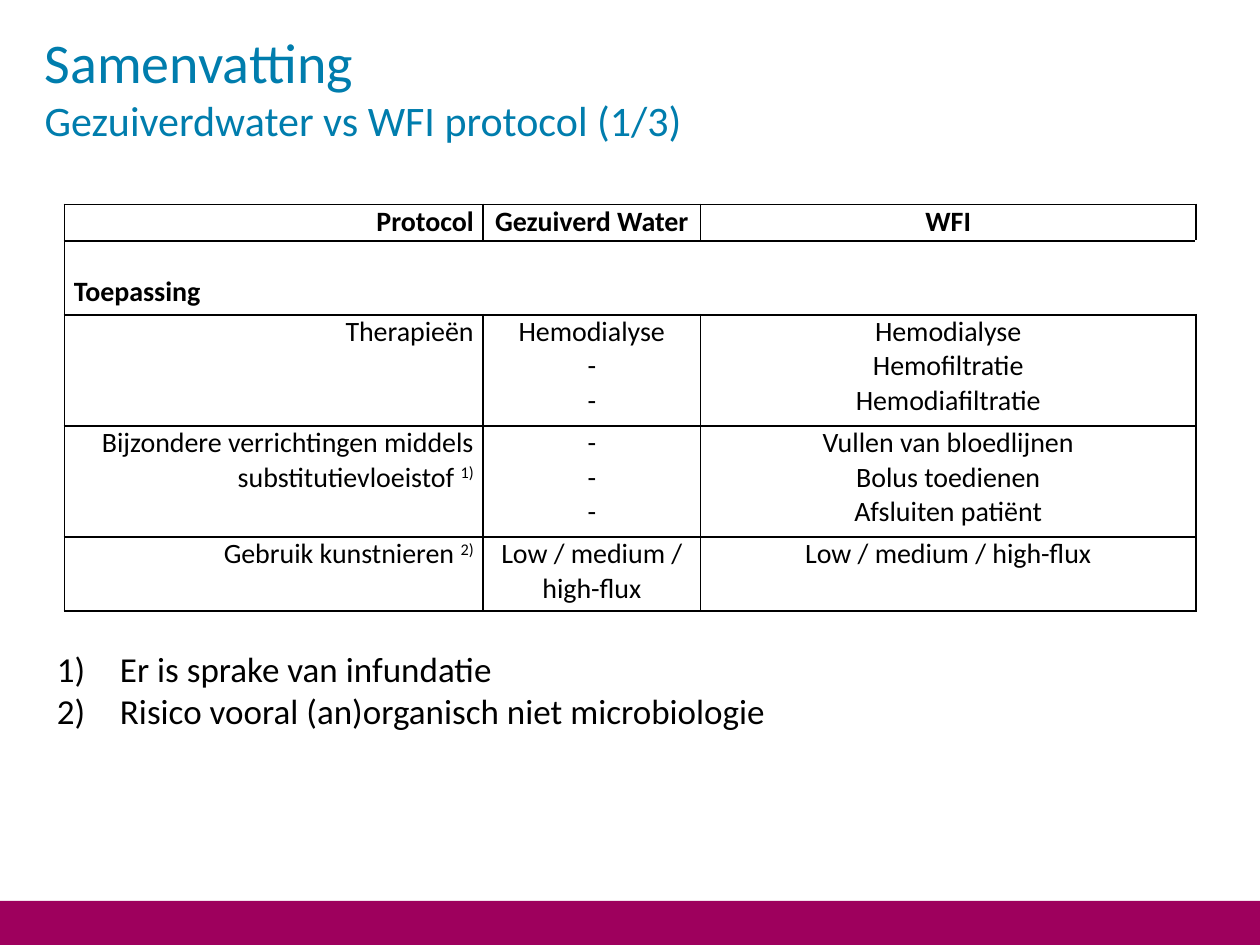
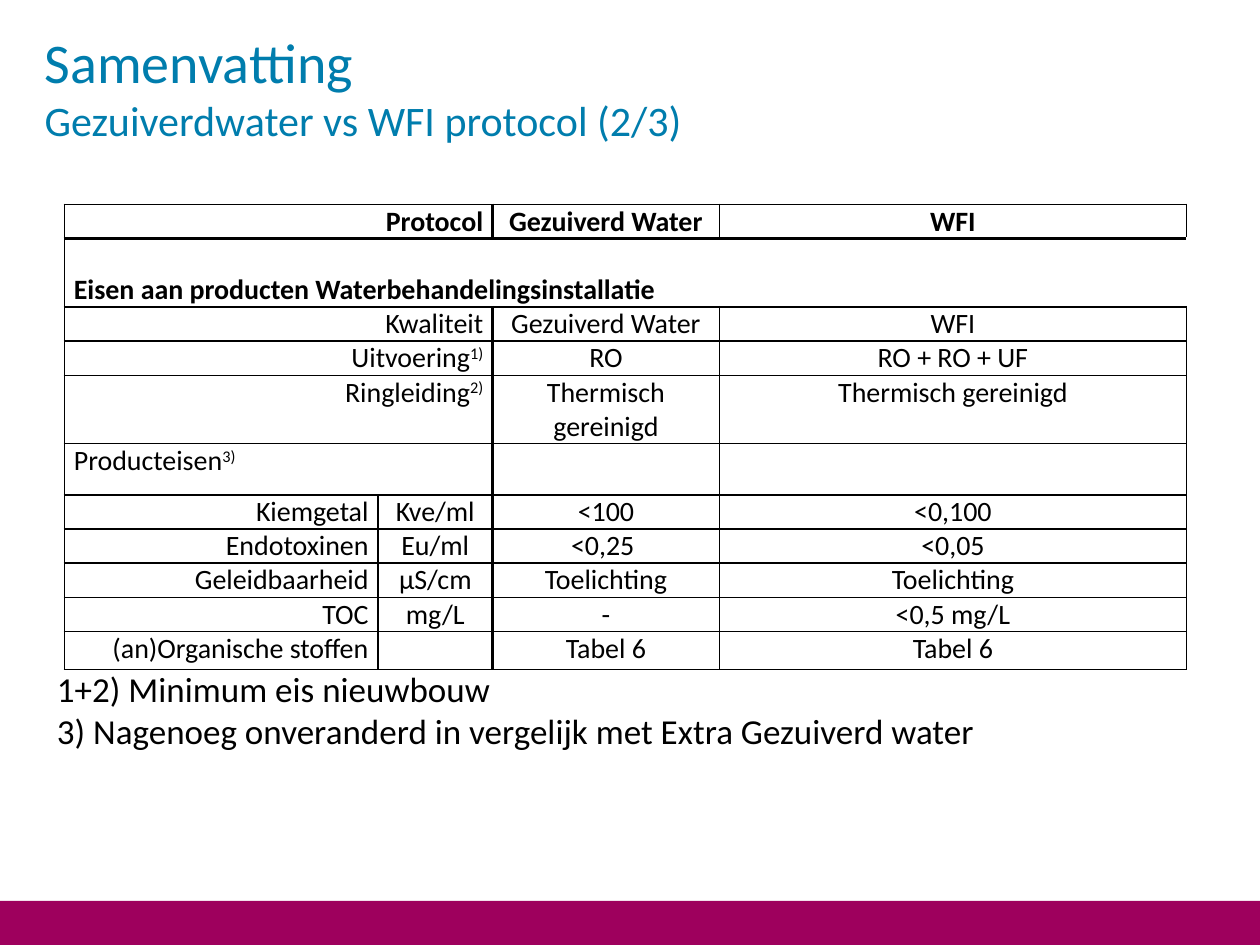
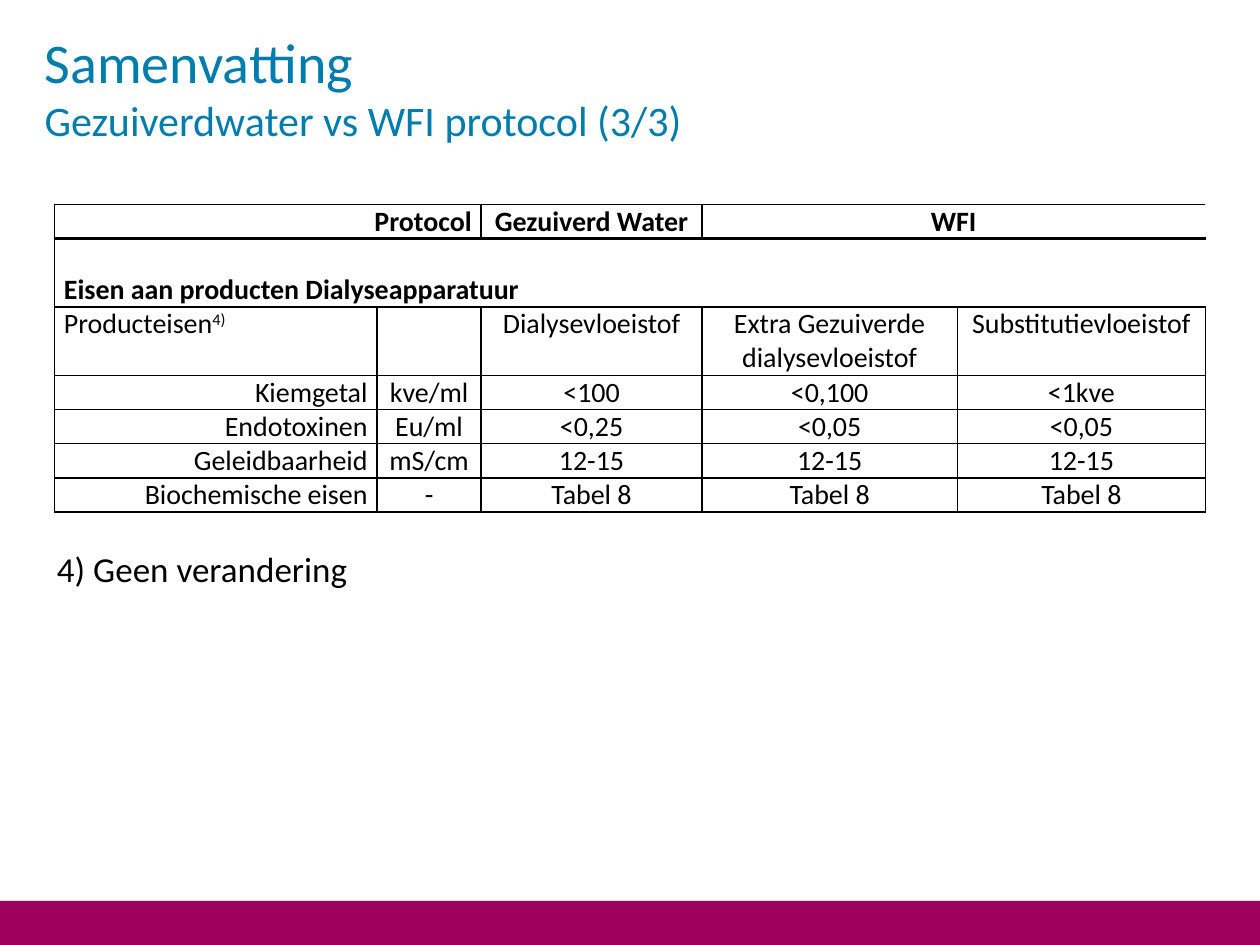
from dataclasses import dataclass

from lxml import etree
from pptx import Presentation
from pptx import util as u
from pptx.dml.color import RGBColor
from pptx.enum import shapes, text
from pptx.oxml import ns

Cm, Pt, Align = u.Cm, u.Pt, text.PP_ALIGN


@dataclass(frozen=True)
class Theme:
    font: str = "Calibri"
    title_color: str = "007DAD"
    band_color: str = "9E005D"
    ink: str = "000000"
    title_size: int = 32
    subtitle_size: int = 24
    remark_size: int = 20
    table_size: int = 16
    thin: float = 1
    heavy: float = 1.5
    line_height: float = 0.69  # one line of table text, in cm


THEME = Theme()


def write(paragraph, content, size, color=THEME.ink, bold=False, align=Align.LEFT):
    """Add formatted text; what follows a ^ is superscript."""
    paragraph.alignment = align
    for index, part in enumerate(content.split("^")):
        run = paragraph.add_run()
        run.text = part
        run.font.name, run.font.size, run.font.bold = THEME.font, Pt(size), bold
        run.font.color.rgb = RGBColor.from_string(color)
        if index:
            run.font._element.set("baseline", "30000")
    if not content:
        paragraph._p.get_or_add_endParaRPr().set("sz", str(size * 100))


def write_lines(frame, content, **style):
    for index, line in enumerate(content.split("\n")):
        paragraph = frame.add_paragraph() if index else frame.paragraphs[0]
        write(paragraph, line, **style)


def set_border(cell, side, width):
    properties = cell._tc.get_or_add_tcPr()
    line = etree.SubElement(properties, ns.qn(f"a:ln{side}"), w=str(Pt(width)))
    fill = etree.SubElement(line, ns.qn("a:solidFill"))
    etree.SubElement(fill, ns.qn("a:srgbClr"), val=THEME.ink)


class Deck:
    def __init__(self, theme):
        self.theme = theme
        self.presentation = Presentation()
        self.presentation.slide_width = Cm(25.4)
        self.presentation.slide_height = Cm(19.05)
        self.slide = None

    def start_slide(self, subtitle):
        self.slide = self.presentation.slides.add_slide(self.presentation.slide_layouts[6])
        self.band()
        self.title("Samenvatting", subtitle)

    def band(self):
        shape = self.slide.shapes.add_shape(
            shapes.MSO_SHAPE.RECTANGLE, 0, Cm(18.16), Cm(25.4), Cm(0.89))
        shape.shadow.inherit = False
        shape.fill.solid()
        shape.fill.fore_color.rgb = RGBColor.from_string(self.theme.band_color)
        shape.line.fill.background()

    def text_box(self, left, top, width, height):
        frame = self.slide.shapes.add_textbox(Cm(left), Cm(top), Cm(width), Cm(height)).text_frame
        frame.word_wrap = True
        return frame

    def title(self, heading, subtitle):
        frame = self.text_box(0.9, 0.56, 16.9, 2.72)
        frame.margin_left = frame.margin_right = frame.margin_top = frame.margin_bottom = 0
        paragraph = frame.paragraphs[0]
        color = self.theme.title_color
        write(paragraph, heading, size=self.theme.title_size, color=color)
        paragraph.add_line_break()
        write(paragraph, subtitle, size=self.theme.subtitle_size, color=color)

    def remarks(self, top, height, content, numbered=False):
        frame = self.text_box(0.9, top, 23.4, height)
        write_lines(frame, content, size=self.theme.remark_size)
        for paragraph in frame.paragraphs:
            properties = paragraph._p.get_or_add_pPr()
            properties.set("marL", str(Cm(1.27)))
            properties.set("indent", str(Cm(-1.27)))
            if numbered:
                etree.SubElement(properties, ns.qn("a:buAutoNum"), type="arabicParenR")

    def table(self, left, widths, heights, rows, label_columns=1, left_rows=(),
              section_line=THEME.heavy):
        """None in a row continues the cell to its left; row 1 is the section heading."""
        theme = self.theme
        table = self.slide.shapes.add_table(
            len(rows), len(widths), Cm(left), Cm(4.12), Cm(sum(widths)), Cm(sum(heights))).table
        table.first_row = table.horz_banding = False
        for column, width in zip(table.columns, widths):
            column.width = Cm(width)
        for row, height in zip(table.rows, heights):
            row.height = Cm(height)

        horizontal = [theme.thin] * (len(rows) + 1)
        horizontal[1:3] = theme.heavy, section_line
        for row_index, row in enumerate(rows):
            section = row_index == 1
            for start, content in enumerate(row):
                if content is None:
                    continue
                end = start
                while end + 1 < len(row) and row[end + 1] is None:
                    end += 1
                # Borders
                for column in range(start, end + 1):
                    cell = table.cell(row_index, column)
                    if column == start:
                        heavy = start == label_columns
                        set_border(cell, "L", theme.heavy if heavy else theme.thin)
                    if column == end:
                        heavy = end + 1 == label_columns
                        set_border(cell, "R", theme.heavy if heavy else theme.thin)
                    set_border(cell, "T", horizontal[row_index])
                    set_border(cell, "B", horizontal[row_index + 1])
                    cell.fill.background()
                # Content
                cell = table.cell(row_index, start)
                if end > start:
                    cell.merge(table.cell(row_index, end))
                cell.margin_left = cell.margin_right = Cm(0.19)
                cell.margin_top = Cm(theme.line_height if section else 0)
                cell.margin_bottom = 0
                align = Align.CENTER
                if start == 0:
                    align = Align.LEFT if section or row_index in left_rows else Align.RIGHT
                write_lines(cell.text_frame, content, size=theme.table_size,
                            bold=row_index < 2, align=align)


def main():
    deck = Deck(THEME)
    line = THEME.line_height

    # Applications
    deck.start_slide("Gezuiverdwater vs WFI protocol (1/3)")
    deck.table(1.3, [8.44, 4.38, 9.99], [0.74, 1.49, 2.24, 2.24, 1.49], [
        ["Protocol", "Gezuiverd Water", "WFI"],
        ["Toepassing", None, None],
        ["Therapieën", "Hemodialyse\n-\n-", "Hemodialyse\nHemofiltratie\nHemodiafiltratie"],
        ["Bijzondere verrichtingen middels substitutievloeistof ^1)", "-\n-\n-",
         "Vullen van bloedlijnen\nBolus toedienen\nAfsluiten patiënt"],
        ["Gebruik kunstnieren ^2)", "Low / medium / high-flux", "Low / medium / high-flux"],
    ])
    deck.remarks(12.93, 3, "Er is sprake van infundatie\n"
                 "Risico vooral (an)organisch niet microbiologie", numbered=True)

    # Requirements for the water treatment installation
    deck.start_slide("Gezuiverdwater vs WFI protocol (2/3)")
    deck.table(1.3, [6.32, 2.31, 4.57, 9.42],
               [line, 2 * line, line, line, 2 * line, 1.03] + [line] * 5, [
        ["Protocol", None, "Gezuiverd Water", "WFI"],
        ["Eisen aan producten Waterbehandelingsinstallatie", None, None, None],
        ["Kwaliteit", None, "Gezuiverd Water", "WFI"],
        ["Uitvoering^1)", None, "RO", "RO + RO + UF"],
        ["Ringleiding^2)", None, "Thermisch gereinigd", "Thermisch gereinigd"],
        ["Producteisen^3)", None, "", ""],
        ["Kiemgetal", "Kve/ml", "<100", "<0,100"],
        ["Endotoxinen", "Eu/ml", "<0,25 ", "<0,05"],
        ["Geleidbaarheid", "µS/cm", "Toelichting", "Toelichting"],
        ["TOC", "mg/L", "-", "<0,5 mg/L"],
        ["(an)Organische stoffen", "", "Tabel 6", "Tabel 6"],
    ], label_columns=2, left_rows=(5,))
    deck.remarks(13.33, 3, "1+2) Minimum eis nieuwbouw\n"
                 "3) Nagenoeg onveranderd in vergelijk met Extra Gezuiverd water")

    # Requirements for the dialysis equipment
    deck.start_slide("Gezuiverdwater vs WFI protocol (3/3)")
    deck.table(1.1, [6.5, 2.1, 4.45, 5.15, 5], [line, 2 * line, 2 * line] + [line] * 4, [
        ["Protocol", None, "Gezuiverd Water", "WFI", None],
        ["Eisen aan producten Dialyseapparatuur", None, None, None, None],
        ["Producteisen^4)", "", "Dialysevloeistof", "Extra Gezuiverde dialysevloeistof",
         "Substitutievloeistof"],
        ["Kiemgetal", "kve/ml", "<100", "<0,100", "<1kve"],
        ["Endotoxinen", "Eu/ml", "<0,25", "<0,05", "<0,05"],
        ["Geleidbaarheid", "mS/cm", "12-15", "12-15", "12-15"],
        ["Biochemische eisen", "-", "Tabel 8", "Tabel 8", "Tabel 8"],
    ], label_columns=2, left_rows=(2,), section_line=THEME.thin)
    deck.remarks(10.92, 2.13, "4) Geen verandering")

    deck.presentation.save("out.pptx")


if __name__ == "__main__":
    main()
